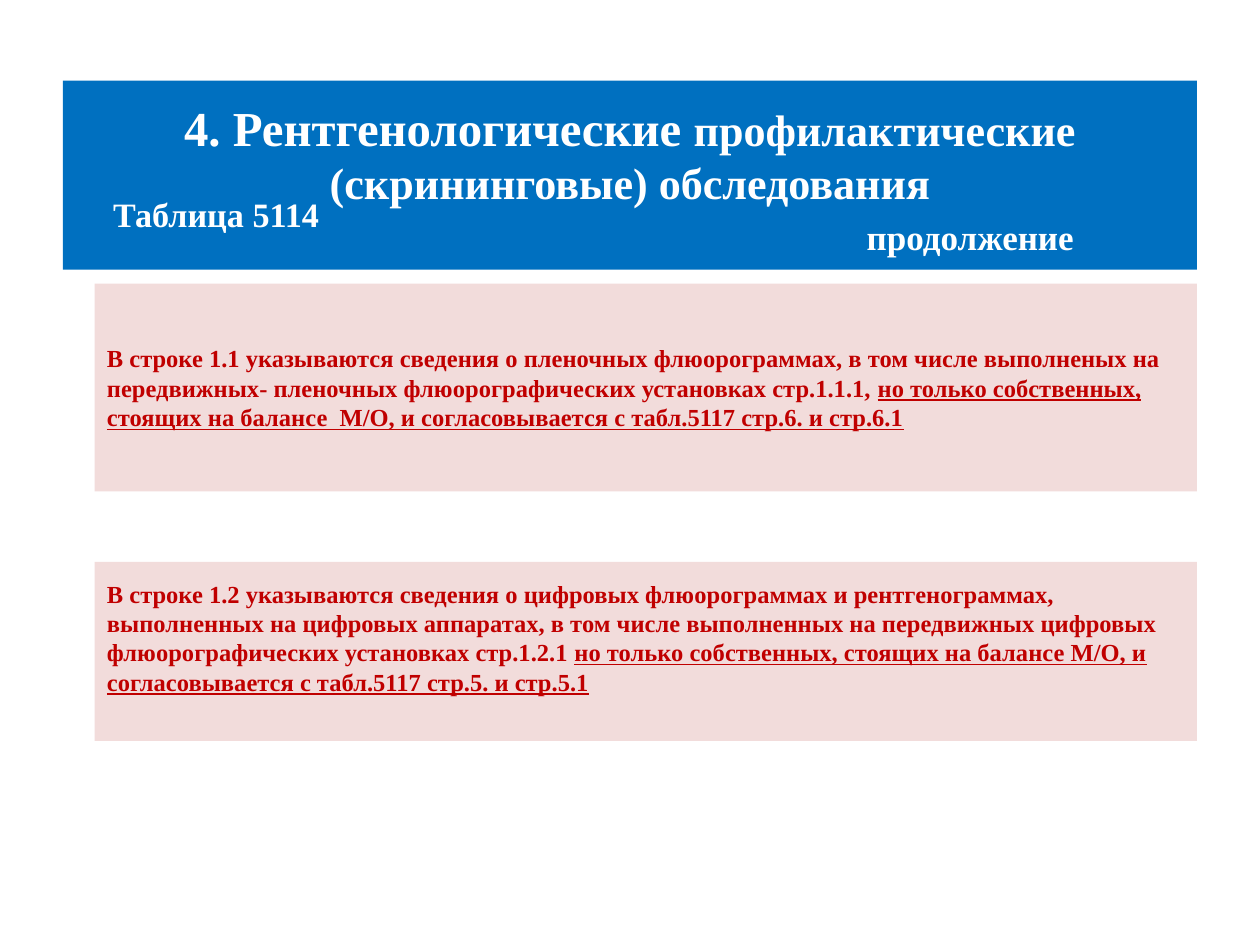
from pptx import Presentation
from pptx.dml.color import RGBColor
from pptx.enum import shapes, text
from pptx.util import Inches, Pt

BLUE = RGBColor(0x00, 0x70, 0xC0)
PINK = RGBColor(0xF2, 0xDC, 0xDB)
RED = RGBColor(0xC0, 0x00, 0x00)
WHITE = RGBColor(0xFF, 0xFF, 0xFF)
FONT = "Times New Roman"

NOTE_LEFT, NOTE_WIDTH = 0.75, 8.75
NOTES = [
    {"top": 2.25, "height": 1.65, "bottom_inset": 0.05, "runs": [
        ("В строке 1.1 указываются сведения о пленочных флюорограммах, "
         "в том числе выполненых на передвижных- пленочных "
         "флюорографических установках стр.1.1.1, ", {}),
        ("но только собственных, стоящих на балансе  М/О, "
         "и согласовывается с табл.5117 стр.6. и стр.6.1",
         {"underline": True})]},
    {"top": 4.46, "height": 1.42, "bottom_inset": 0.27, "runs": [
        ("В строке 1.2 указываются сведения о цифровых флюорограммах и "
         "рентгенограммах, выполненных на цифровых аппаратах, в том числе "
         "выполненных на передвижных цифровых флюорографических "
         "установках стр.1.2.1 ", {}),
        ("но только собственных, стоящих на балансе М/О, "
         "и согласовывается с табл.5117 стр.5. и стр.5.1",
         {"underline": True})]},
]


def write_text(shape, runs, color, size, alignment, bottom_inset=0.05):
    """Fill a shape with one paragraph; each run may override the font."""
    frame = shape.text_frame
    frame.word_wrap = True
    frame.vertical_anchor = text.MSO_ANCHOR.MIDDLE
    frame.margin_bottom = Inches(bottom_inset)
    paragraph = frame.paragraphs[0]
    paragraph.alignment = alignment
    for words, overrides in runs:
        run = paragraph.add_run()
        run.text = words
        run.font.color.rgb = color
        font_format = {"name": FONT, "size": Pt(size), "bold": True}
        for name, value in (font_format | overrides).items():
            setattr(run.font, name, value)


def add_panel(slide, left, top, width, height, fill):
    """Add a flat rectangle without outline."""
    panel = slide.shapes.add_shape(
        shapes.MSO_SHAPE.RECTANGLE,
        Inches(left), Inches(top), Inches(width), Inches(height))
    panel.shadow.inherit = False
    panel.fill.solid()
    panel.fill.fore_color.rgb = fill
    panel.line.fill.background()
    return panel


def add_title(slide):
    panel = add_panel(slide, 0.5, 0.64, 9, 1.5, BLUE)
    runs = [("4. Рентгенологические ", {"size": Pt(27.9)}),
            ("профилактические (скрининговые) обследования", {})]
    write_text(panel, runs, WHITE, 25.2, text.PP_ALIGN.CENTER,
               bottom_inset=0.4)


def add_label(slide, words, left, top, width, height, size):
    label = slide.shapes.add_textbox(
        Inches(left), Inches(top), Inches(width), Inches(height))
    write_text(label, [(words, {})], WHITE, size, text.PP_ALIGN.CENTER)


def add_note(slide, note):
    panel = add_panel(slide, NOTE_LEFT, note["top"], NOTE_WIDTH,
                      note["height"], PINK)
    write_text(panel, note["runs"], RED, 14, text.PP_ALIGN.LEFT,
               note["bottom_inset"])


def main():
    presentation = Presentation()
    presentation.slide_width = Inches(10)
    presentation.slide_height = Inches(7.5)
    slide = presentation.slides.add_slide(presentation.slide_layouts[6])
    add_title(slide)
    add_label(slide, "Таблица 5114 ", 0.55, 1.39, 2.4, 0.61, 19.5)
    add_label(slide, "продолжение ", 6.06, 1.62, 3.35, 0.51, 20)
    for note in NOTES:
        add_note(slide, note)
    presentation.save("out.pptx")


if __name__ == "__main__":
    main()
